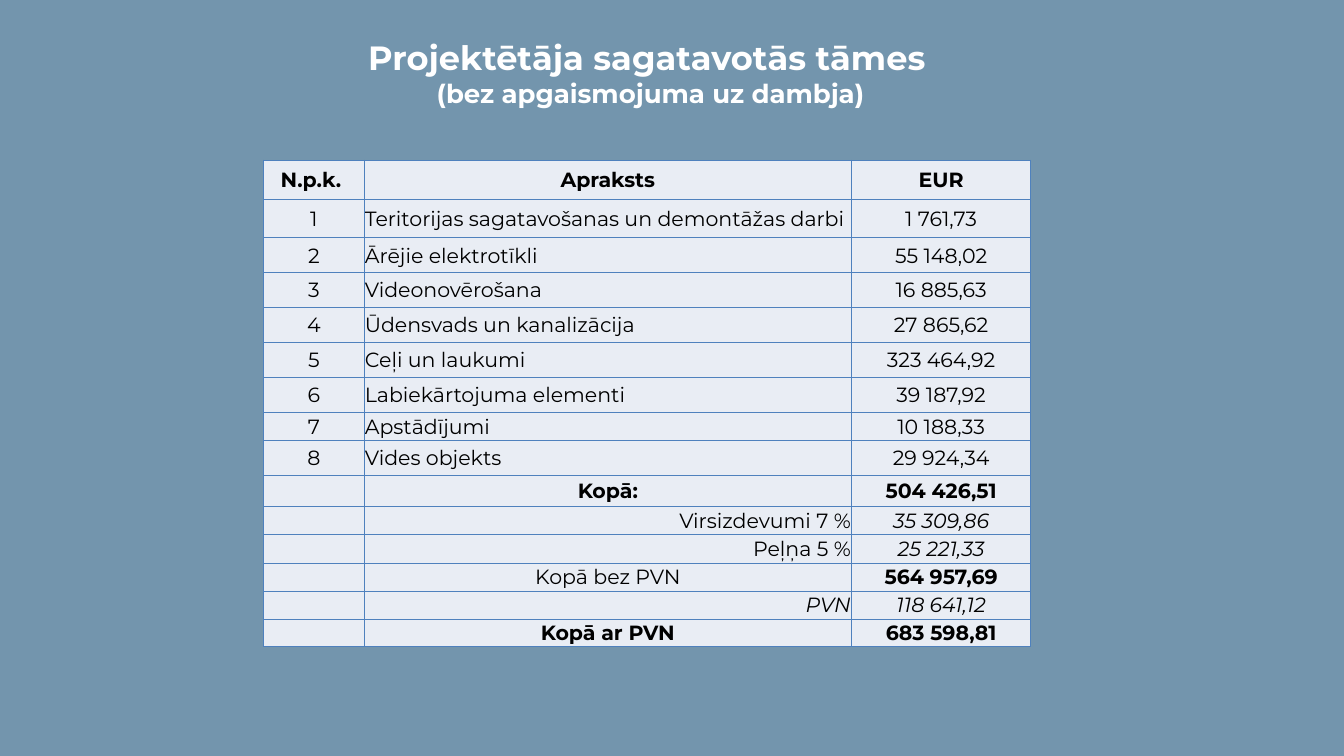
from dataclasses import dataclass

from lxml.etree import SubElement
from pptx import Presentation
from pptx.dml.color import RGBColor
from pptx.enum.text import MSO_ANCHOR as Anchor, MSO_AUTO_SIZE as AutoSize, PP_ALIGN as Align
from pptx.oxml.ns import qn
from pptx.slide import Slide
from pptx.table import _Cell as Cell
from pptx.util import Pt

PX = 9144
FONT = "Montserrat"
BACKGROUND, WHITE, BLACK = "7395AD", "FFFFFF", "000000"
CELL_FILL, GRID = "E9EDF4", "4F81BD"
COLUMN_WIDTHS = (150, 725, 267)


@dataclass(frozen=True)
class EstimateRow:
    number: str
    description: str
    amount: str
    height: int = 42
    align: Align = Align.LEFT
    label_bold: bool = False
    label_italic: bool = False
    amount_bold: bool = False
    amount_italic: bool = False


ROWS = (
    EstimateRow("N.p.k. ", "Apraksts", "EUR", 58, Align.CENTER, label_bold=True, amount_bold=True),
    EstimateRow("1", "Teritorijas sagatavošanas un demontāžas darbi", "1 761,73", 58),
    EstimateRow("2", "Ārējie elektrotīkli", "55 148,02", 52),
    EstimateRow("3", "Videonovērošana", "16 885,63", 52),
    EstimateRow("4", "Ūdensvads un kanalizācija", "27 865,62", 52),
    EstimateRow("5", "Ceļi un laukumi", "323 464,92", 52),
    EstimateRow("6", "Labiekārtojuma elementi", "39 187,92", 52),
    EstimateRow("7", "Apstādījumi", "10 188,33"),
    EstimateRow("8", "Vides objekts", "29 924,34", 52),
    EstimateRow("", "Kopā:", "504 426,51", 46, Align.CENTER, label_bold=True, amount_bold=True),
    EstimateRow("", "Virsizdevumi 7 %", "35 309,86", align=Align.RIGHT, amount_italic=True),
    EstimateRow("", "Peļņa 5 %", "25 221,33", align=Align.RIGHT, amount_italic=True),
    EstimateRow("", "Kopā bez PVN", "564 957,69", align=Align.CENTER, amount_bold=True),
    EstimateRow("", "PVN", "118 641,12", align=Align.RIGHT, label_italic=True, amount_italic=True),
    EstimateRow("", "Kopā ar PVN", "683 598,81", 41, Align.CENTER, label_bold=True, amount_bold=True),
)


def px(length: int) -> int:
    return length * PX


def rgb(color: str) -> RGBColor:
    return RGBColor.from_string(color)


def add_text(paragraph, text: str, *, size: float = 22, color: str = BLACK,
             bold: bool = False, italic: bool = False) -> None:
    run = paragraph.add_run()
    run.text = text
    font = run.font
    font.name, font.size, font.bold, font.italic = FONT, Pt(size), bold, italic
    font.color.rgb = rgb(color)


def draw_borders(cell: Cell) -> None:
    properties = cell._tc.get_or_add_tcPr()
    for position, side in enumerate(("a:lnL", "a:lnR", "a:lnT", "a:lnB")):
        border = SubElement(properties, qn(side), w=str(Pt(1)))
        fill = SubElement(border, qn("a:solidFill"))
        SubElement(fill, qn("a:srgbClr"), val=GRID)
        properties.insert(position, border)


def fill_cell(cell: Cell, text: str, align: Align, **text_format) -> None:
    cell.fill.solid()
    cell.fill.fore_color.rgb = rgb(CELL_FILL)
    cell.vertical_anchor = Anchor.MIDDLE
    cell.margin_left = cell.margin_right = cell.margin_top = px(1)
    cell.margin_bottom = 0
    draw_borders(cell)
    paragraph = cell.text_frame.paragraphs[0]
    paragraph.alignment = align
    if text:
        add_text(paragraph, text, **text_format)


def draw_title(slide: Slide) -> None:
    title = slide.shapes.title
    title.left, title.top, title.width, title.height = map(px, (150, 46, 1625, 125))
    frame = title.text_frame
    frame.auto_size = AutoSize.NONE
    frame.word_wrap = True
    frame.vertical_anchor = Anchor.MIDDLE
    heading = frame.paragraphs[0]
    heading.alignment = Align.CENTER
    add_text(heading, "Projektētāja sagatavotās tāmes", size=36, color=WHITE, bold=True)
    heading.add_line_break()
    add_text(heading, " (bez apgaismojuma uz dambja)", size=27.9, color=WHITE, bold=True)


def draw_estimate(slide: Slide) -> None:
    height = sum(row.height for row in ROWS)
    estimate = slide.shapes.add_table(len(ROWS), len(COLUMN_WIDTHS), px(392), px(238),
                                      px(sum(COLUMN_WIDTHS)), px(height)).table
    estimate.horz_banding = False
    for column, width in zip(estimate.columns, COLUMN_WIDTHS):
        column.width = px(width)
    for index, row in enumerate(ROWS):
        estimate.rows[index].height = px(row.height)
        number, description, amount = estimate.rows[index].cells
        fill_cell(number, row.number, Align.CENTER, bold=row.label_bold)
        fill_cell(description, row.description, row.align,
                  bold=row.label_bold, italic=row.label_italic)
        fill_cell(amount, row.amount, Align.CENTER,
                  bold=row.amount_bold, italic=row.amount_italic)


def main() -> None:
    deck = Presentation()
    deck.slide_width, deck.slide_height = px(2000), px(1125)
    slide = deck.slides.add_slide(deck.slide_layouts[5])
    slide.background.fill.solid()
    slide.background.fill.fore_color.rgb = rgb(BACKGROUND)
    draw_title(slide)
    draw_estimate(slide)
    deck.save("out.pptx")


if __name__ == "__main__":
    main()
